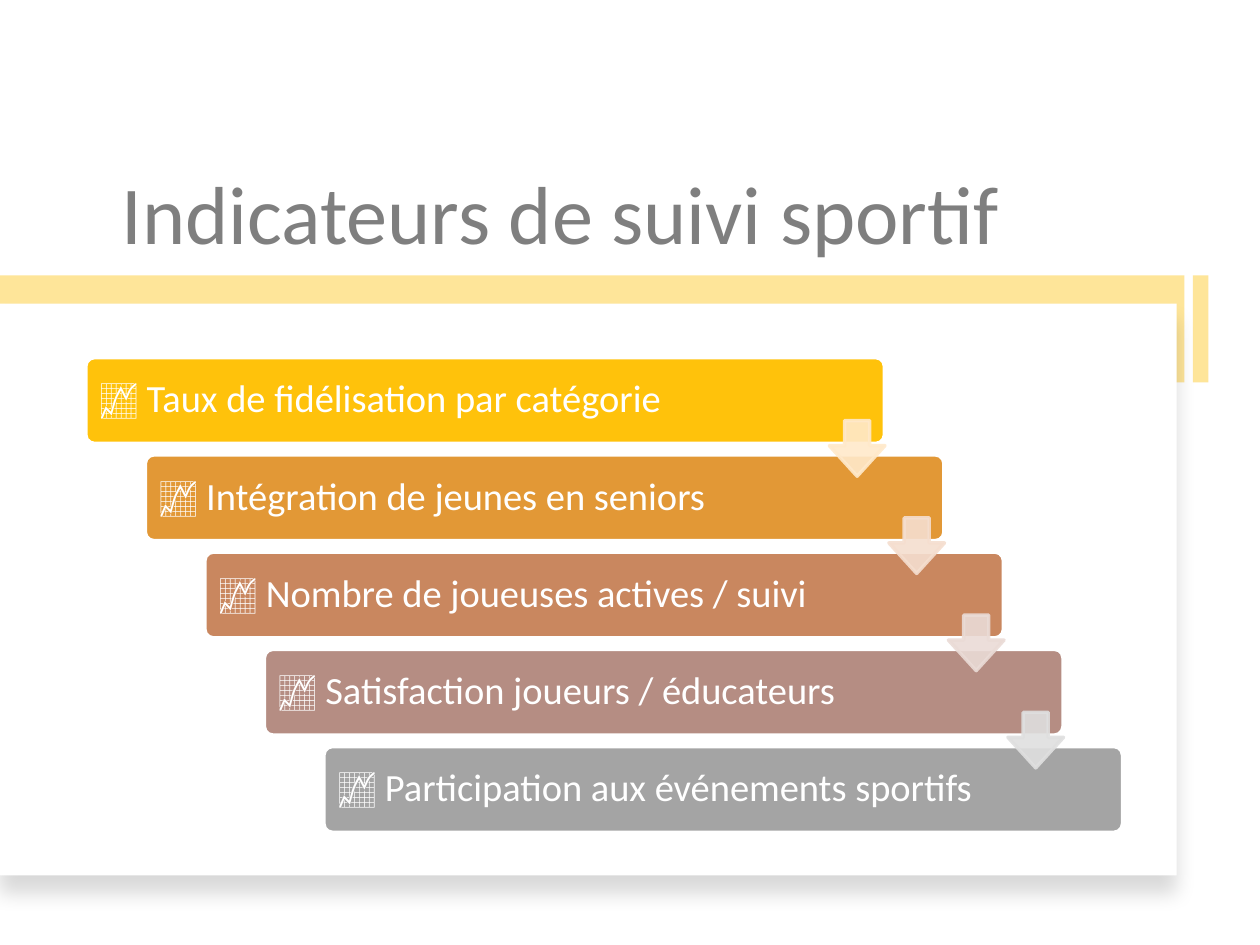
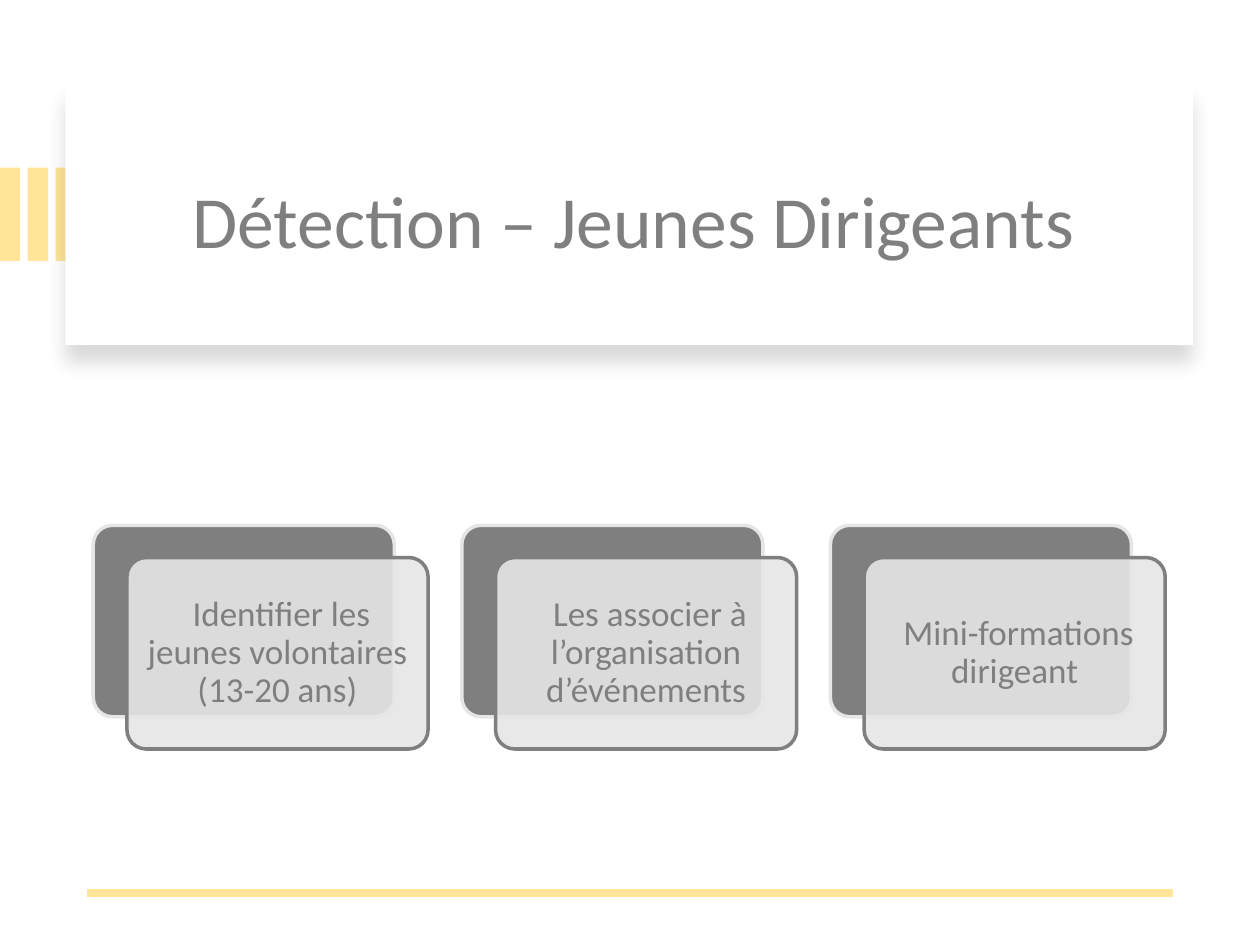
"""Build two slides on sports follow-up indicators and young club leaders."""
from dataclasses import dataclass
from typing import Optional

import lxml.etree
import pptx
import pptx.dml.color
import pptx.enum.shapes
import pptx.enum.text
import pptx.oxml.ns
import pptx.util

Cm = pptx.util.Cm
Pt = pptx.util.Pt
RGBColor = pptx.dml.color.RGBColor
Shapes = pptx.enum.shapes.MSO_SHAPE
Align = pptx.enum.text.PP_ALIGN
Anchor = pptx.enum.text.MSO_ANCHOR
qn = pptx.oxml.ns.qn

FONT = "Calibri"
WHITE = RGBColor(0xFF, 0xFF, 0xFF)
GREY = RGBColor(0x7F, 0x7F, 0x7F)
PALE_GREY = RGBColor(0xE7, 0xE6, 0xE6)
YELLOW = RGBColor(0xFE, 0xE5, 0x99)
BLACK = RGBColor(0, 0, 0)


@dataclass(frozen=True)
class Area:
    """Left, top, width and height in centimetres."""
    left: float
    top: float
    width: float
    height: float

    def moved(self, right: float, down: float) -> "Area":
        return Area(self.left + right, self.top + down, self.width, self.height)

    def lengths(self) -> tuple:
        return Cm(self.left), Cm(self.top), Cm(self.width), Cm(self.height)


@dataclass(frozen=True)
class Look:
    """Fill, outline and opacity of a shape."""
    fill: RGBColor
    line: Optional[RGBColor] = None
    fill_opacity: int = 100
    line_opacity: int = 100


@dataclass(frozen=True)
class Lettering:
    """Size, colour and placing of a text."""
    size: float
    color: RGBColor = GREY
    align: Align = Align.CENTER
    anchor: Anchor = Anchor.MIDDLE
    margins: tuple = (0.25, 0.13)
    spacing: float = 1.0


@dataclass(frozen=True)
class Step:
    """One bar of the staircase and the arrow that leaves it."""
    text: str
    color: RGBColor
    arrow: Optional[RGBColor] = None


BAR = Area(1.73, 7.21, 16.1, 1.73)
BAR_SHIFT = (1.2, 1.96)
ARROW = Area(16.72, 8.48, 1.12, 1.12)
BAR_TEXT = Lettering(22, WHITE, Align.LEFT, margins=(0.23, 0.23), spacing=0.9)
STEPS = [
    Step("📈 Taux de fidélisation par catégorie",
         RGBColor(0xFF, 0xC2, 0x0B), RGBColor(0xFF, 0xE9, 0xCA)),
    Step("📈 Intégration de jeunes en seniors",
         RGBColor(0xE2, 0x98, 0x36), RGBColor(0xF5, 0xDE, 0xCF)),
    Step("📈 Nombre de joueuses actives / suivi",
         RGBColor(0xC9, 0x87, 0x5F), RGBColor(0xEA, 0xDB, 0xD6)),
    Step("📈 Satisfaction joueurs / éducateurs",
         RGBColor(0xB5, 0x8D, 0x83), RGBColor(0xDF, 0xDF, 0xDF)),
    Step("📈 Participation aux événements sportifs", RGBColor(0xA4, 0xA4, 0xA4)),
]

CARD = Area(1.88, 10.59, 6.07, 3.86)
CARD_PITCH = 7.43
CARD_OFFSET = (0.68, 0.65)
CARD_TEXT = Lettering(20, margins=(0.2, 0.2), spacing=0.9)
CARDS = [
    " Identifier les jeunes volontaires (13-20 ans)",
    " Les associer à l’organisation d’événements",
    " Mini-formations dirigeant",
]


def set_opacity(holder, percent: int) -> None:
    """Make the solid fill inside the holder partly transparent."""
    color = holder.find(qn("a:solidFill")).find(qn("a:srgbClr"))
    lxml.etree.SubElement(color, qn("a:alpha"), val=str(percent * 1000))


def add_block(page, kind: Shapes, area: Area, look: Look, adjustments: tuple = ()):
    """Draw a preset shape without shadow."""
    block = page.shapes.add_shape(kind, *area.lengths())
    block.shadow.inherit = False
    for index, value in enumerate(adjustments):
        block.adjustments[index] = value
    block.fill.solid()
    block.fill.fore_color.rgb = look.fill
    if look.fill_opacity < 100:
        set_opacity(block.fill._xPr, look.fill_opacity)
    if look.line is None:
        block.line.fill.background()
    else:
        block.line.color.rgb = look.line
        block.line.width = Pt(2)
        if look.line_opacity < 100:
            set_opacity(block.line._ln, look.line_opacity)
    return block


def add_panel(page, area: Area) -> None:
    """Draw a white panel with a soft shadow below it."""
    panel = add_block(page, Shapes.RECTANGLE, area, Look(WHITE))
    effects = panel._element.spPr.find(qn("a:effectLst"))
    shadow = lxml.etree.SubElement(
        effects, qn("a:outerShdw"), blurRad=str(Pt(11)), dist=str(Pt(10)),
        dir="5400000", algn="t", rotWithShape="0")
    color = lxml.etree.SubElement(shadow, qn("a:srgbClr"), val=str(BLACK))
    lxml.etree.SubElement(color, qn("a:alpha"), val="15000")


def write(box, text: str, lettering: Lettering) -> None:
    """Put formatted text into a box or shape."""
    frame = box.text_frame
    frame.word_wrap = True
    frame.vertical_anchor = lettering.anchor
    side, edge = lettering.margins
    frame.margin_left = frame.margin_right = Cm(side)
    frame.margin_top = frame.margin_bottom = Cm(edge)
    frame.text = text
    para = frame.paragraphs[0]
    para.alignment = lettering.align
    para.line_spacing = lettering.spacing
    for span in para.runs:
        span.font.name = FONT
        span.font.size = Pt(lettering.size)
        span.font.color.rgb = lettering.color


def add_title(page, text: str, area: Area, lettering: Lettering) -> None:
    """Write the slide title."""
    write(page.shapes.add_textbox(*area.lengths()), text, lettering)


def add_rule(page, start: float, end: float, height: float) -> None:
    """Draw a horizontal yellow rule."""
    rule = page.shapes.add_connector(
        pptx.enum.shapes.MSO_CONNECTOR.STRAIGHT,
        Cm(start), Cm(height), Cm(end), Cm(height))
    rule.line.color.rgb = YELLOW
    rule.line.width = Pt(4.5)
    lxml.etree.SubElement(rule._element.spPr, qn("a:effectLst"))


def build_indicators(page) -> None:
    """Draw the staircase of sports indicators."""
    add_title(page, "Indicateurs de suivi sportif", Area(1.68, 1.07, 19.25, 4.32),
              Lettering(47, anchor=Anchor.BOTTOM))
    for band in (Area(24.05, 5.55, 0.31, 2.16), Area(0, 5.55, 23.88, 2.16)):
        add_block(page, Shapes.RECTANGLE, band, Look(YELLOW))
    add_panel(page, Area(0, 6.12, 23.72, 11.53))
    shifts = [(BAR_SHIFT[0] * row, BAR_SHIFT[1] * row) for row in range(len(STEPS))]
    for step, shift in zip(STEPS, shifts):
        bar = add_block(page, Shapes.ROUNDED_RECTANGLE, BAR.moved(*shift),
                        Look(step.color, WHITE), (0.1,))
        write(bar, step.text, BAR_TEXT)
    for step, shift in zip(STEPS, shifts):
        if step.arrow is not None:
            add_block(page, Shapes.DOWN_ARROW, ARROW.moved(*shift),
                      Look(step.arrow, step.arrow, 90, 90), (0.45, 0.55))


def build_young_leaders(page) -> None:
    """Draw the three cards on finding young leaders."""
    stripe = Area(0, 3.38, 0.41, 1.88)
    for column in range(3):
        add_block(page, Shapes.RECTANGLE, stripe.moved(0.56 * column, 0), Look(YELLOW))
    add_panel(page, Area(1.32, 1.7, 22.73, 5.26))
    add_title(page, "Détection – Jeunes Dirigeants", Area(2.18, 2.26, 21.18, 4.32),
              Lettering(42))
    add_rule(page, 1.75, 23.65, 18.01)
    for column, text in enumerate(CARDS):
        back = CARD.moved(CARD_PITCH * column, 0)
        add_block(page, Shapes.ROUNDED_RECTANGLE, back, Look(GREY, PALE_GREY), (0.1,))
        card = add_block(page, Shapes.ROUNDED_RECTANGLE, back.moved(*CARD_OFFSET),
                         Look(PALE_GREY, GREY, 90), (0.1,))
        write(card, text, CARD_TEXT)


def main() -> None:
    """Create and save the deck."""
    deck = pptx.Presentation()
    deck.slide_width, deck.slide_height = Cm(25.4), Cm(19.05)
    for build in (build_indicators, build_young_leaders):
        build(deck.slides.add_slide(deck.slide_layouts[6]))
    deck.save("out.pptx")


if __name__ == "__main__":
    main()
